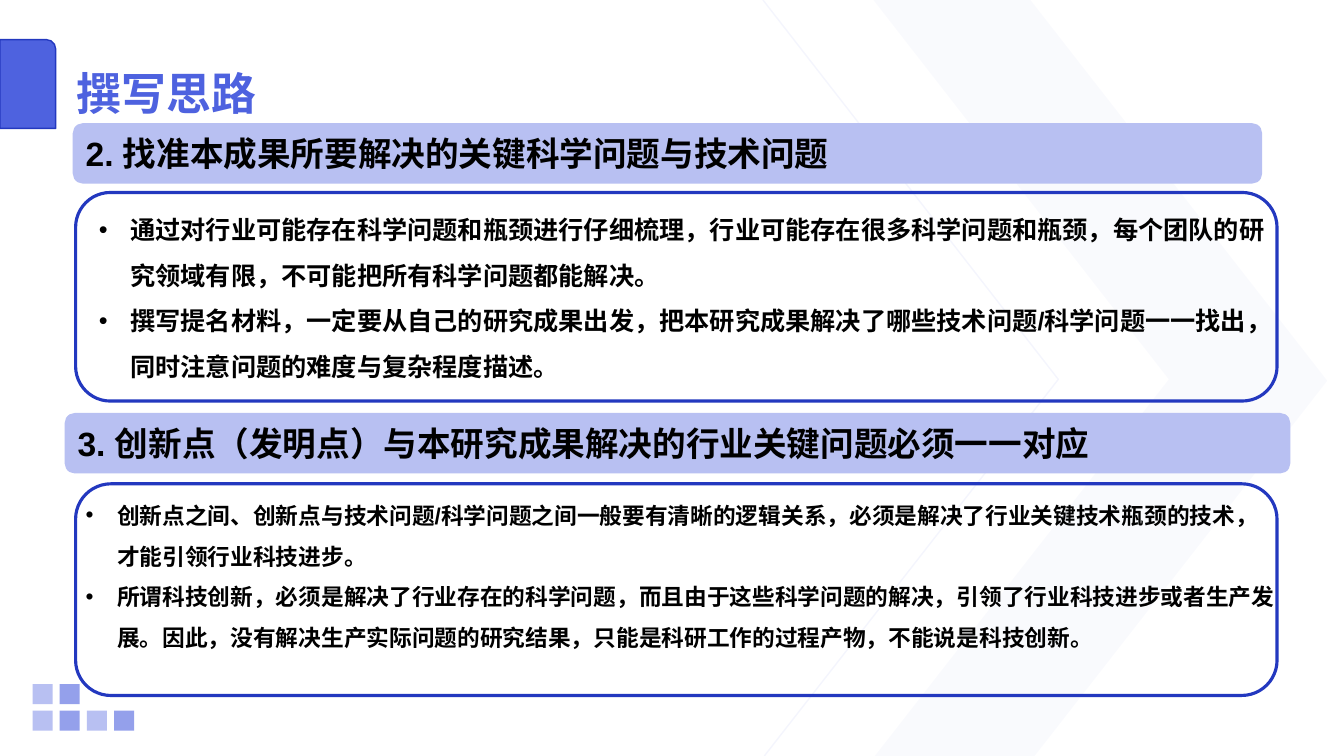
from dataclasses import dataclass
from typing import Optional

import pptx
import pptx.dml.color
import pptx.enum.shapes
import pptx.enum.text
import pptx.oxml
import pptx.oxml.ns
import pptx.util

Pt = pptx.util.Pt
SHAPES = pptx.enum.shapes.MSO_SHAPE
ANCHOR = pptx.enum.text.MSO_ANCHOR
BLUE, DARK_BLUE, PALE_BLUE, BLACK = "4E62DF", "2338BF", "B8C0F2", "000000"
BULLET_INDENT = 22.5


@dataclass
class Box:
    left: float
    top: float
    width: float
    height: float


@dataclass
class Section:
    heading: str
    band: Box
    frame: Box
    body: Box
    size: float
    points: list[str]


@dataclass
class Chevron:
    corners: list[tuple[float, float]]
    filled: bool


CHEVRONS = [
    Chevron([(545.8, 540), (756, 270.7), (545, 0)], False),
    Chevron([(735.8, 0), (948.2, 271.8), (738.7, 540), (625, 540), (835.2, 270.7), (623.5, 0)], True),
]

SQUARES = [(0, 0, 40), (0, 1, 40), (1, 0, 60), (1, 1, 60), (2, 1, 40), (3, 1, 60)]

SECTIONS = [
    Section(
        "2. 找准本成果所要解决的关键科学问题与技术问题",
        Box(52, 88, 849.6, 43.2),
        Box(54, 137.5, 858.2, 149),
        Box(63.4, 139, 858.2, 138.2),
        18,
        [
            "通过对行业可能存在科学问题和瓶颈进行仔细梳理，行业可能存在很多科学问题和瓶颈，每个团队的研究领域有限，不可能把所有科学问题都能解决。",
            "撰写提名材料，一定要从自己的研究成果出发，把本研究成果解决了哪些技术问题/科学问题一一找出，同时注意问题的难度与复杂程度描述。",
        ],
    ),
    Section(
        "3. 创新点（发明点）与本研究成果解决的行业关键问题必须一一对应",
        Box(46.2, 295, 875.5, 43.2),
        Box(54, 345.6, 858.2, 151.2),
        Box(54, 344.9, 867.6, 138.2),
        16.2,
        [
            "创新点之间、创新点与技术问题/科学问题之间一般要有清晰的逻辑关系，必须是解决了行业关键技术瓶颈的技术，才能引领行业科技进步。",
            "所谓科技创新，必须是解决了行业存在的科学问题，而且由于这些科学问题的解决，引领了行业科技进步或者生产发展。因此，没有解决生产实际问题的研究结果，只能是科研工作的过程产物，不能说是科技创新。",
        ],
    ),
]


def color(value: str) -> pptx.dml.color.RGBColor:
    return pptx.dml.color.RGBColor.from_string(value)


def paint(shape, fill: Optional[str] = None, line: Optional[str] = None,
          line_width: float = 1, opacity: int = 100) -> None:
    shape.shadow.inherit = False
    if fill:
        shape.fill.solid()
        shape.fill.fore_color.rgb = color(fill)
    else:
        shape.fill.background()
    if line:
        shape.line.color.rgb = color(line)
        shape.line.width = Pt(line_width)
    else:
        shape.line.fill.background()
    if opacity < 100:
        for element in shape._element.spPr.iter(pptx.oxml.ns.qn("a:srgbClr")):
            alpha = pptx.oxml.parse_xml(
                f'<a:alpha {pptx.oxml.ns.nsdecls("a")} val="{opacity * 1000}"/>')
            element.append(alpha)


def add_box(slide, kind, box: Box):
    return slide.shapes.add_shape(kind, Pt(box.left), Pt(box.top), Pt(box.width), Pt(box.height))


def add_chevron(slide, chevron: Chevron) -> None:
    start, *others = chevron.corners
    builder = slide.shapes.build_freeform(start[0], start[1], scale=Pt(1))
    builder.add_line_segments(others, close=chevron.filled)
    shape = builder.convert_to_shape()
    if chevron.filled:
        paint(shape, fill=BLUE, opacity=3)
    else:
        paint(shape, line=BLUE, opacity=5)


def write(shape, text: str, size: float, font_color: str, anchor) -> None:
    frame = shape.text_frame
    frame.text = text
    frame.word_wrap = True
    frame.auto_size = pptx.enum.text.MSO_AUTO_SIZE.NONE
    frame.vertical_anchor = anchor
    for paragraph in frame.paragraphs:
        paragraph.alignment = pptx.enum.text.PP_ALIGN.LEFT
        paragraph.space_before = Pt(0)
        for run in paragraph.runs:
            run.font.name = "Arial"
            run.font.size = Pt(size)
            run.font.bold = True
            run.font.color.rgb = color(font_color)


def place(slide, placeholder, box: Box) -> None:
    placeholder.left, placeholder.top = Pt(box.left), Pt(box.top)
    placeholder.width, placeholder.height = Pt(box.width), Pt(box.height)
    slide.shapes._spTree.append(placeholder._element)


def add_section(slide, section: Section, placeholder) -> None:
    place(slide, placeholder, section.body)
    write(placeholder, "\n".join(section.points), section.size, BLACK, ANCHOR.TOP)
    for paragraph in placeholder.text_frame.paragraphs:
        paragraph.line_spacing = 1.5
        properties = paragraph._p.get_or_add_pPr()
        properties.set("marL", str(Pt(BULLET_INDENT)))
        properties.set("indent", str(-Pt(BULLET_INDENT)))
        for tag in ('buFont typeface="Arial"', 'buChar char="•"'):
            properties.append(pptx.oxml.parse_xml(f'<a:{tag} {pptx.oxml.ns.nsdecls("a")}/>'))
    band = add_box(slide, SHAPES.ROUNDED_RECTANGLE, section.band)
    paint(band, fill=PALE_BLUE)
    write(band, section.heading, 24, BLACK, ANCHOR.MIDDLE)
    paint(add_box(slide, SHAPES.ROUNDED_RECTANGLE, section.frame), line=DARK_BLUE, line_width=2.25)


def add_title(slide, text: str) -> None:
    title = slide.shapes.title
    place(slide, title, Box(54.7, 28, 850.3, 57))
    write(title, text, 32, BLUE, ANCHOR.BOTTOM)
    frame = title.text_frame
    frame.margin_left = frame.margin_right = frame.margin_top = frame.margin_bottom = Pt(0)


def main() -> None:
    presentation = pptx.Presentation()
    presentation.slide_width, presentation.slide_height = Pt(960), Pt(540)
    slide = presentation.slides.add_slide(presentation.slide_layouts.get_by_name("Two Content"))
    bodies = [item for item in slide.placeholders if item.placeholder_format.idx > 0]
    for chevron in CHEVRONS:
        add_chevron(slide, chevron)
    for column, row, opacity in SQUARES:
        box = Box(23.3 + 19.4 * column, 488.7 + 18.9 * row, 14.3, 14.3)
        paint(add_box(slide, SHAPES.RECTANGLE, box), fill=BLUE, opacity=opacity)
    tab = add_box(slide, SHAPES.ROUND_1_RECTANGLE, Box(0, 28.3, 39.8, 63.4))
    paint(tab, fill=BLUE, line=DARK_BLUE)
    for section, body in zip(SECTIONS, bodies):
        add_section(slide, section, body)
    add_title(slide, "撰写思路")
    presentation.save("out.pptx")


if __name__ == "__main__":
    main()
